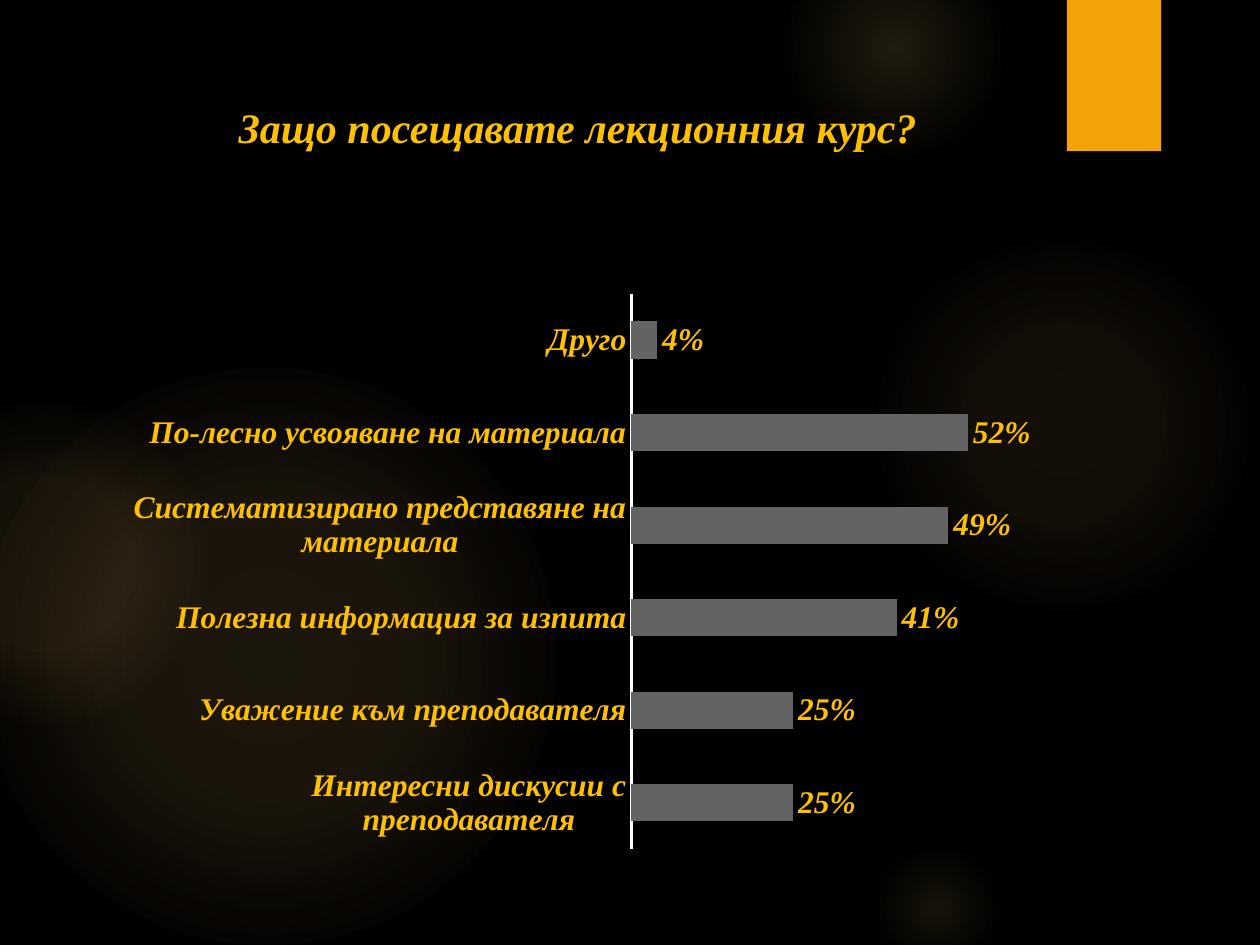
import pptx
import pptx.chart.data
import pptx.dml.color
import pptx.enum.chart
import pptx.enum.shapes
import pptx.enum.text
import pptx.oxml
import pptx.oxml.ns
import pptx.util

Cm = pptx.util.Cm
Pt = pptx.util.Pt
SHAPE = pptx.enum.shapes.MSO_SHAPE
NS = pptx.oxml.ns.nsdecls("a")
NSC = pptx.oxml.ns.nsdecls("c")

COLORS = {
    "back": "000000",
    "glow": "FAC96A",
    "tab": "F5A408",
    "text": "FFC000",
    "bar": "636363",
    "axis": "FFFFFF",
}

# left, top, size in cm, then (position, opacity) stops in percent
GLOWS = [
    (17.5, 4.65, 7.82, [(0, 7), (36, 6), (69, 0)]),
    (15.8, -1.27, 4.44, [(0, 14), (36, 7), (73, 0)]),
    (17.5, 16.94, 2.74, [(0, 10), (31, 5), (66, 0)]),
    (-0.43, 7.42, 11.63, [(0, 11), (36, 10), (75, 0)]),
    (-2.34, 8.05, 6.55, [(0, 8), (36, 8), (72, 0)]),
]

REASONS = {
    "Интересни дискусии с преподавателя": 0.25,
    "Уважение към преподавателя": 0.25,
    "Полезна информация за изпита": 0.41,
    "Систематизирано представяне на материала": 0.49,
    "По-лесно усвояване на материала": 0.52,
    "Друго": 0.04,
}


def color(name):
    return pptx.dml.color.RGBColor.from_string(COLORS[name])


def paint(fill, name):
    fill.solid()
    fill.fore_color.rgb = color(name)


class Page:
    font = "Times New Roman"

    def __init__(self, slide):
        self.slide = slide
        paint(slide.background.fill, "back")

    def style(self, font, size):
        font.name = self.font
        font.size = Pt(size)
        font.bold = font.italic = True
        font.color.rgb = color("text")

    def shape(self, kind, *box):
        shape = self.slide.shapes.add_shape(kind, *map(Cm, box))
        shape.shadow.inherit = False
        shape.line.fill.background()
        return shape

    def glow(self, left, top, size, stops):
        """Add a disc that fades out from its centre."""
        disc = self.shape(SHAPE.OVAL, left, top, size, size)
        disc.fill.background()
        marks = "".join(
            f'<a:gs pos="{pos * 1000}"><a:srgbClr val="{COLORS["glow"]}">'
            f'<a:alpha val="{alpha * 1000}"/></a:srgbClr></a:gs>'
            for pos, alpha in stops)
        grad = pptx.oxml.parse_xml(
            f'<a:gradFill {NS} rotWithShape="1"><a:gsLst>{marks}</a:gsLst>'
            '<a:path path="circle"><a:fillToRect l="50000" t="50000" '
            'r="50000" b="50000"/></a:path></a:gradFill>')
        props = disc.element.spPr
        props.replace(props.find(pptx.oxml.ns.qn("a:noFill")), grad)

    def tab(self, *box):
        tab = self.shape(SHAPE.RECTANGLE, *box)
        paint(tab.fill, "tab")
        effects = tab.element.spPr.find(pptx.oxml.ns.qn("a:effectLst"))
        effects.append(pptx.oxml.parse_xml(
            f'<a:outerShdw {NS} blurRad="{Pt(3)}" dist="{Pt(2)}" dir="5400000" '
            'rotWithShape="0"><a:srgbClr val="000000"><a:alpha val="45000"/>'
            '</a:srgbClr></a:outerShdw>'))

    def title(self, text, *box):
        frame = self.slide.shapes.add_textbox(*map(Cm, box)).text_frame
        frame.word_wrap = True
        frame.text = text
        line = frame.paragraphs[0]
        line.alignment = pptx.enum.text.PP_ALIGN.CENTER
        self.style(line.runs[0].font, 24)

    def chart(self, data, *box):
        enum = pptx.enum.chart
        table = pptx.chart.data.CategoryChartData(number_format="0%")
        table.categories = list(data)
        table.add_series("Series 1", list(data.values()))
        chart = self.slide.shapes.add_chart(
            enum.XL_CHART_TYPE.BAR_CLUSTERED, *map(Cm, box), table).chart
        chart.has_title = chart.has_legend = False
        self.style(chart.font, 18)

        names = chart.category_axis
        names.major_tick_mark = enum.XL_TICK_MARK.NONE
        names.format.line.width = Pt(1.5)
        paint(names.format.line.fill, "axis")
        self.style(names.tick_labels.font, 18)

        scale = chart.value_axis
        scale.minimum_scale, scale.maximum_scale = 0, 0.6
        scale.has_major_gridlines = False
        scale.visible = False

        plot = chart.plots[0]
        plot.gap_width = 150
        plot.vary_by_categories = False
        paint(plot.series[0].format.fill, "bar")
        plot.has_data_labels = True
        labels = plot.data_labels
        labels.show_value = True
        labels.number_format = "0%"
        labels.number_format_is_linked = False
        labels.position = enum.XL_LABEL_POSITION.OUTSIDE_END
        self.style(labels.font, 18)
        self.place(chart, x=0.56, y=0.02, w=0.42, h=0.96)

    def place(self, chart, **parts):
        """Fix the inner plot area, in fractions of the chart."""
        area = chart.element.chart.plotArea
        for old in area.findall(pptx.oxml.ns.qn("c:layout")):
            area.remove(old)
        sides = "".join(f'<c:{key}Mode val="edge"/>' for key in "xy")
        sides += "".join(f'<c:{key} val="{val}"/>' for key, val in parts.items())
        area.insert(0, pptx.oxml.parse_xml(
            f'<c:layout {NSC}><c:manualLayout><c:layoutTarget val="inner"/>'
            f'{sides}</c:manualLayout></c:layout>'))


def main():
    deck = pptx.Presentation()
    deck.slide_width, deck.slide_height = Cm(25.4), Cm(19.05)
    page = Page(deck.slides.add_slide(deck.slide_layouts[6]))
    for glow in GLOWS:
        page.glow(*glow)
    page.tab(21.51, 0, 1.9, 3.05)
    page.title("Защо посещавате лекционния курс?", 1.27, 1.93, 20.75, 2.01)
    page.chart(REASONS, 2.29, 5.69, 18.64, 11.66)
    deck.save("out.pptx")


if __name__ == "__main__":
    main()
